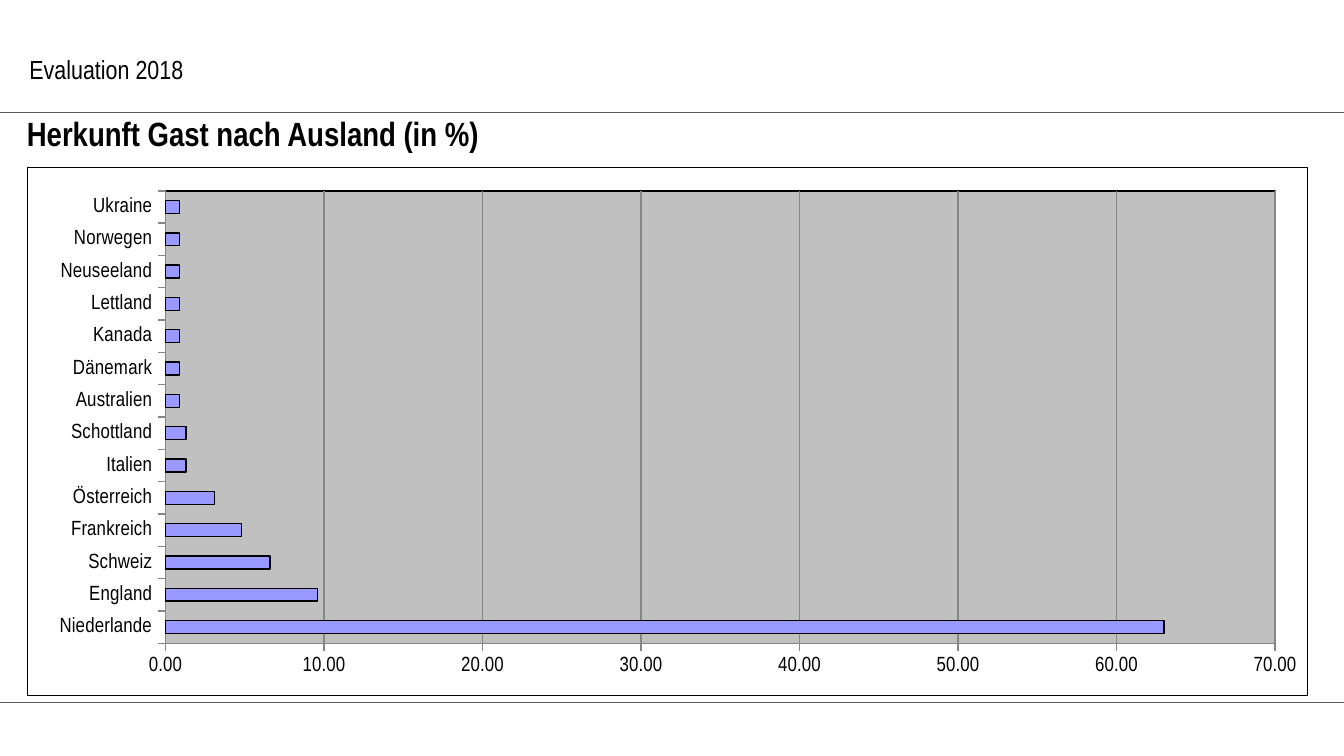
from typing import NamedTuple

from lxml import etree
from pptx import Presentation
from pptx.chart.chart import Chart
from pptx.chart.data import CategoryChartData
from pptx.dml.color import RGBColor
from pptx.enum.chart import XL_CHART_TYPE, XL_TICK_MARK
from pptx.enum.shapes import MSO_CONNECTOR
from pptx.oxml import parse_xml
from pptx.oxml.ns import nsdecls, qn
from pptx.slide import Slide
from pptx.util import Inches, Pt

BAR_CLUSTERED = XL_CHART_TYPE.BAR_CLUSTERED
TICK_OUTSIDE = XL_TICK_MARK.OUTSIDE
STRAIGHT = MSO_CONNECTOR.STRAIGHT

BLACK = RGBColor(0x00, 0x00, 0x00)
RULE_GRAY = RGBColor(0x59, 0x59, 0x59)
GRID_GRAY = RGBColor(0x86, 0x86, 0x86)
PLOT_GRAY = RGBColor(0xC0, 0xC0, 0xC0)
BAR_BLUE = RGBColor(0x99, 0x99, 0xFF)

FONT = "Arial Narrow"
PAGE_WIDTH = Inches(10)
PAGE_HEIGHT = PAGE_WIDTH * 9 // 16


class Rule(NamedTuple):
    left: float
    top: float


class Label(NamedTuple):
    text: str
    left: float
    top: float
    width: float
    height: float
    size: int
    bold: bool
    margin_x: float
    margin_y: float


class Origin(NamedTuple):
    country: str
    percent: float


RULES = (Rule(-0.04, 5.23), Rule(0, 0.84))

LABELS = (
    Label("Herkunft Gast nach Ausland (in %)", 0.2, 0.84, 9.45, 0.35, 18, True, 0, 0),
    Label("Evaluation 2018", 0.12, 0.35, 9.69, 0.64, 14, False, 0.1, 0.05),
)

ORIGINS = (
    Origin("Niederlande", 63.0),
    Origin("England", 9.6),
    Origin("Schweiz", 6.6),
    Origin("Frankreich", 4.8),
    Origin("Österreich", 3.1),
    Origin("Italien", 1.3),
    Origin("Schottland", 1.3),
    Origin("Australien", 0.9),
    Origin("Dänemark", 0.9),
    Origin("Kanada", 0.9),
    Origin("Lettland", 0.9),
    Origin("Neuseeland", 0.9),
    Origin("Norwegen", 0.9),
    Origin("Ukraine", 0.9),
)


def add_rule(page: Slide, rule: Rule) -> None:
    line = page.shapes.add_connector(
        STRAIGHT, Inches(rule.left), Inches(rule.top), PAGE_WIDTH, Inches(rule.top))
    line.line.color.rgb = RULE_GRAY
    line.line.width = Pt(0.5)
    etree.SubElement(line._element.spPr, qn("a:effectLst"))


def add_label(page: Slide, label: Label) -> None:
    box = page.shapes.add_textbox(Inches(label.left), Inches(label.top),
                                  Inches(label.width), Inches(label.height))
    frame = box.text_frame
    frame.word_wrap = True
    frame.margin_left = frame.margin_right = Inches(label.margin_x)
    frame.margin_top = frame.margin_bottom = Inches(label.margin_y)
    frame.text = label.text
    font = frame.paragraphs[0].runs[0].font
    font.name = FONT
    font.size = Pt(label.size)
    font.bold = label.bold
    font.color.rgb = BLACK


def area_format(fill: str, line_width: float):
    """Fill and black outline for a chart area, which only XML can set."""
    return parse_xml(
        f'<c:spPr {nsdecls("c", "a")}>{fill}<a:ln w="{Pt(line_width)}">'
        f'<a:solidFill><a:srgbClr val="{BLACK}"/></a:solidFill></a:ln></c:spPr>')


def format_areas(chart: Chart) -> None:
    chart_space = chart._chartSpace
    chart_space.find(qn("c:txPr")).addprevious(area_format("<a:noFill/>", 0.5))
    plot_area = chart_space.chart.plotArea
    plot_area.append(area_format(
        f'<a:solidFill><a:srgbClr val="{PLOT_GRAY}"/></a:solidFill>', 0.75))

    # Inner plot position as fractions of the chart
    for layout in plot_area.findall(qn("c:layout")):
        plot_area.remove(layout)
    plot_area.insert(0, parse_xml(
        f'<c:layout {nsdecls("c")}><c:manualLayout><c:layoutTarget val="inner"/>'
        '<c:xMode val="edge"/><c:yMode val="edge"/><c:x val="0.108"/>'
        '<c:y val="0.045"/><c:w val="0.867"/><c:h val="0.856"/>'
        '</c:manualLayout></c:layout>'))


def add_origin_chart(page: Slide) -> None:
    data = CategoryChartData()
    data.categories = [origin.country for origin in ORIGINS]
    data.add_series("Series 1", [origin.percent for origin in ORIGINS])
    chart = page.shapes.add_chart(BAR_CLUSTERED, Inches(0.2), Inches(1.24),
                                  Inches(9.53), Inches(3.94), data).chart
    chart.has_title = False
    chart.has_legend = False
    chart.font.name = FONT
    chart.font.size = Pt(11)
    chart.font.color.rgb = BLACK

    # Bars
    plot = chart.plots[0]
    plot.gap_width = 150
    plot.vary_by_categories = False
    bars = plot.series[0].format
    bars.fill.solid()
    bars.fill.fore_color.rgb = BAR_BLUE
    bars.line.color.rgb = BLACK
    bars.line.width = Pt(0.75)

    # Axes
    for axis in (chart.category_axis, chart.value_axis):
        axis.major_tick_mark = TICK_OUTSIDE
        axis.format.line.color.rgb = GRID_GRAY
        axis.format.line.width = Pt(0.75)
    values = chart.value_axis
    values.minimum_scale, values.maximum_scale, values.major_unit = 0, 70, 10
    values.tick_labels.number_format = "0.00"
    values.tick_labels.number_format_is_linked = False
    values.has_major_gridlines = True
    values.major_gridlines.format.line.color.rgb = GRID_GRAY
    values.major_gridlines.format.line.width = Pt(0.75)

    format_areas(chart)


def main() -> None:
    deck = Presentation()
    deck.slide_width = PAGE_WIDTH
    deck.slide_height = PAGE_HEIGHT
    page = deck.slides.add_slide(deck.slide_layouts[6])

    for rule in RULES:
        add_rule(page, rule)
    add_origin_chart(page)
    for label in LABELS:
        add_label(page, label)

    deck.save("out.pptx")


if __name__ == "__main__":
    main()
